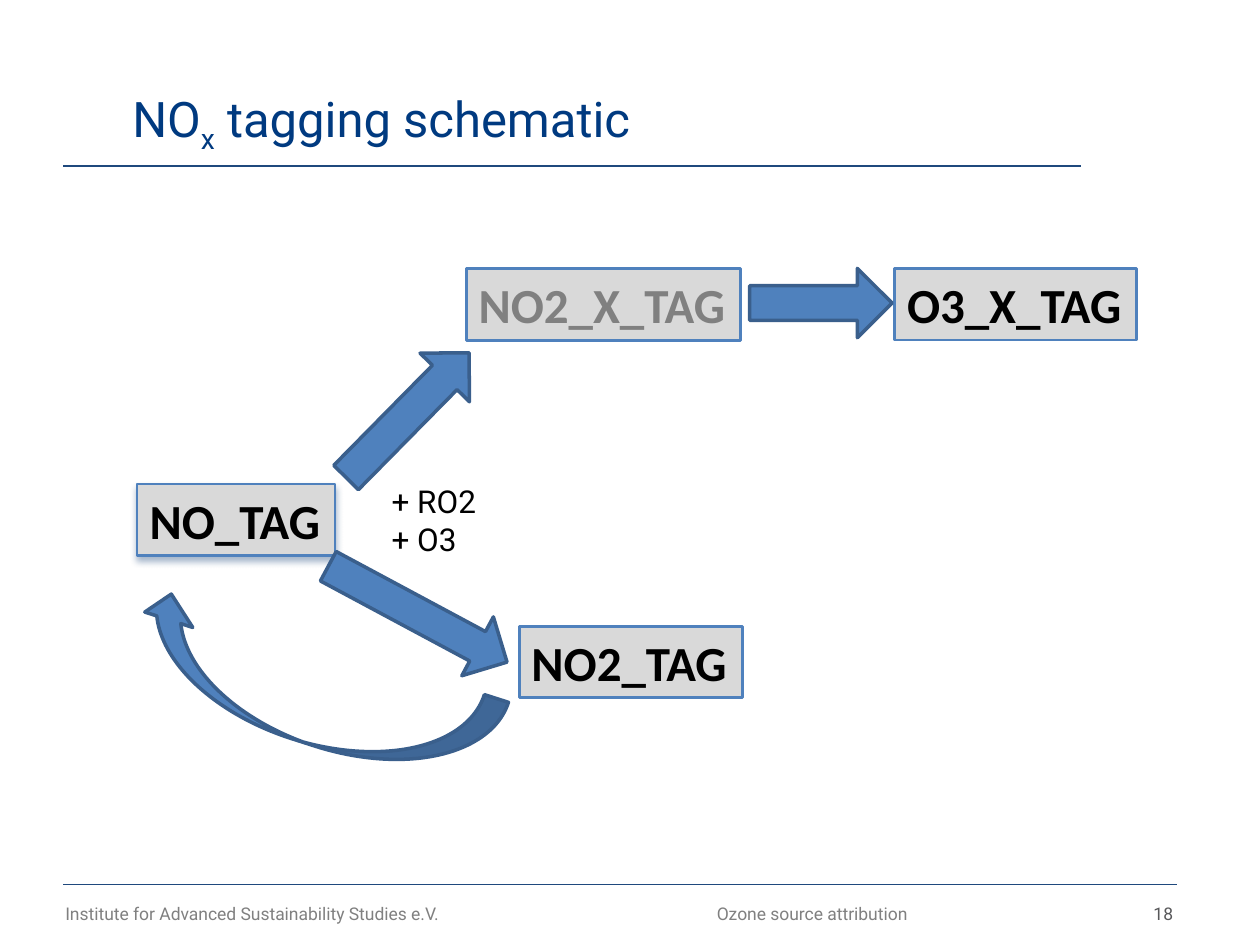
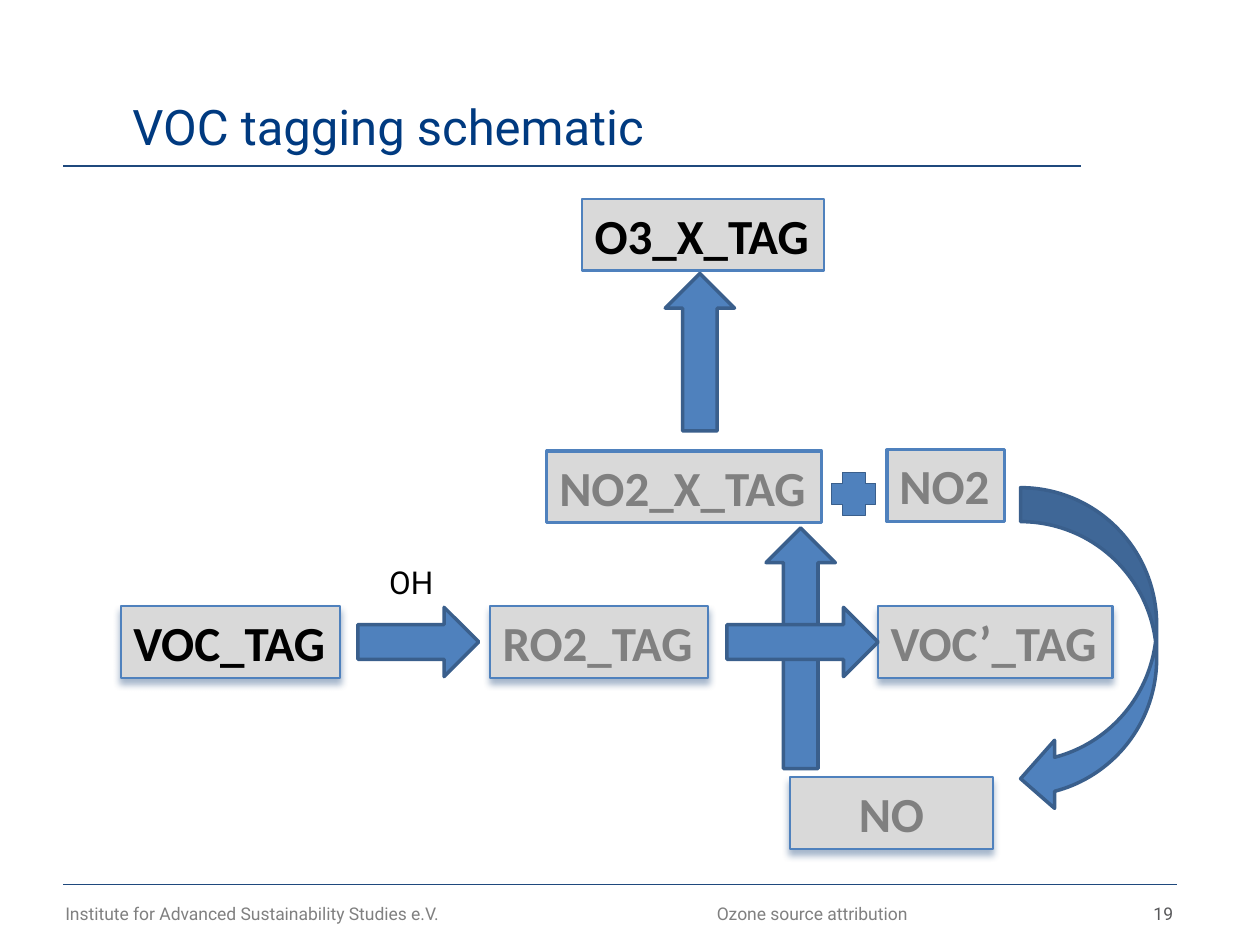
from lxml.etree import SubElement
from pptx import Presentation
from pptx.dml.color import RGBColor
from pptx.enum.shapes import MSO_CONNECTOR, MSO_SHAPE
from pptx.enum.text import MSO_ANCHOR, PP_ALIGN
from pptx.oxml.ns import qn
from pptx.util import Inches, Pt

HUES = {
    "title": "003A80", "rule": "1F497D", "foot": "808080", "page": "58585A",
    "box": "D9D9D9", "edge": "4F81BD", "arrow": "4F81BD", "rim": "3A5F8C",
    "ink": "000000", "faint": "808080", "shade": "1F497D",
}
BODY, LABEL = "Roboto", "Calibri"


def hue(name):
    return RGBColor.from_string(HUES[name])


def write(frame, *lines, size=18, font=BODY, color="ink", bold=False,
          align=PP_ALIGN.LEFT, anchor=MSO_ANCHOR.TOP, wrap=False, inset=True):
    """Fill a text frame; a line is a string or a list of (text, baseline)."""
    frame.word_wrap = wrap
    frame.vertical_anchor = anchor
    if not inset:
        frame.margin_left = frame.margin_right = 0
        frame.margin_top = frame.margin_bottom = 0
    for i, line in enumerate(lines):
        para = frame.add_paragraph() if i else frame.paragraphs[0]
        para.alignment = align
        for text, base in [(line, 0)] if isinstance(line, str) else line:
            run = para.add_run()
            run.text = text
            run.font.size, run.font.name = Pt(size), font
            run.font.bold = bold
            run.font.color.rgb = hue(color)
            if base:
                run.font._element.set("baseline", str(base * 1000))


class Deck:
    def __init__(self):
        self.prs = Presentation()
        self.prs.slide_width, self.prs.slide_height = Inches(10), Inches(7.5)
        self.slide = None

    def start(self, title, page):
        """Add a slide with its title, rules and footer."""
        self.slide = self.prs.slides.add_slide(self.prs.slide_layouts[5])
        self.rule(8.58, 1.32)
        self.rule(9.34, 7.02)
        foot = {"size": 10, "color": "foot", "wrap": True}
        self.text(0.42, 7.12, 3.73, 0.27,
                  "Institute for Advanced Sustainability Studies e.V.", **foot)
        self.text(4.16, 7.12, 4.57, 0.27, "Ozone source attribution",
                  align=PP_ALIGN.CENTER, **foot)
        self.text(9.02, 7.17, 0.29, 0.17, str(page), size=10, color="page",
                  align=PP_ALIGN.RIGHT, inset=False)
        head = self.slide.shapes.title
        head.left, head.top = Inches(1.05), Inches(0.75)
        head.width, head.height = Inches(4.72), Inches(0.48)
        write(head.text_frame, title, size=28, color="title", wrap=True,
              anchor=MSO_ANCHOR.BOTTOM, inset=False)

    def rule(self, end, y):
        line = self.slide.shapes.add_connector(
            MSO_CONNECTOR.STRAIGHT, Inches(0.5), Inches(y), Inches(end), Inches(y))
        line.line.color.rgb, line.line.width = hue("rule"), Pt(1)
        SubElement(line._element.spPr, qn("a:effectLst"))

    def text(self, x, y, w, h, *lines, **style):
        box = self.slide.shapes.add_textbox(
            Inches(x), Inches(y), Inches(w), Inches(h))
        write(box.text_frame, *lines, **style)

    def shape(self, kind, x, y, w, h, fill="arrow", edge="rim", width=2, turn=0):
        item = self.slide.shapes.add_shape(
            kind, Inches(x), Inches(y), Inches(w), Inches(h))
        item.shadow.inherit = False
        item.fill.solid()
        item.fill.fore_color.rgb = hue(fill)
        item.line.color.rgb, item.line.width = hue(edge), Pt(width)
        item.rotation = turn
        return item

    def node(self, x, y, w, text, color="ink", width=1.75, shade=False, **style):
        """Add a grey species box, with or without a soft shadow."""
        box = self.shape(MSO_SHAPE.RECTANGLE, x, y, w, 0.57, "box", "edge",
                         1.25 if shade else width)
        if shade:
            glow = SubElement(
                box._element.spPr.find(qn("a:effectLst")), qn("a:outerShdw"),
                blurRad=str(Pt(4)), dist=str(Pt(3)), dir="5400000", rotWithShape="0")
            tint = SubElement(glow, qn("a:srgbClr"), val=HUES["shade"])
            SubElement(tint, qn("a:alpha"), val="40000")
        write(box.text_frame, text, size=28, font=LABEL, color=color,
              bold=True, **style)

    def arrow(self, x, y, w, h=0.55, turn=0):
        self.shape(MSO_SHAPE.RIGHT_ARROW, x, y, w, h, turn=turn)

    def curve(self, x, y, w, h, turn=0):
        self.shape(MSO_SHAPE.CURVED_LEFT_ARROW, x, y, w, h, turn=turn)


def draw_nox(deck):
    deck.start([("NO", 0), ("x", -25), (" tagging schematic", 0)], 18)
    # Species and the paths between them
    deck.node(1.09, 3.84, 1.57, "NO_TAG", shade=True)
    deck.node(3.7, 2.13, 2.18, "NO2_X_TAG", "faint")
    deck.arrow(2.54, 3.02, 1.39, turn=314.6)
    deck.node(4.12, 4.97, 1.77, "NO2_TAG")
    deck.arrow(2.51, 4.61, 1.61, 0.53, turn=28.2)
    deck.text(3.01, 3.78, 0.94, 0.71, "+ RO2", "+ O3")
    deck.node(7.1, 2.13, 1.92, "O3_X_TAG", width=1.5)
    deck.arrow(5.95, 2.13, 1.13)
    # Return path
    deck.curve(2.08, 3.99, 0.8, 3.01, turn=107.8)


def draw_voc(deck):
    deck.start("VOC tagging schematic", 19)
    # NO to NO2
    deck.node(6.27, 6.17, 1.61, "NO", "faint", shade=True, wrap=True,
              align=PP_ALIGN.CENTER)
    deck.node(4.34, 3.58, 2.18, "NO2_X_TAG", "faint")
    deck.arrow(5.4, 4.87, 1.91, turn=270)
    deck.node(7.04, 3.57, 0.93, "NO2", "faint")
    deck.shape(MSO_SHAPE.CROSS, 6.6, 3.75, 0.35, 0.34, width=0.5)
    # VOC chain
    row = 4.81
    for x, w, text, color in [(0.96, 1.74, "VOC_TAG", "ink"),
                              (6.97, 1.86, "VOC’_TAG", "faint"),
                              (3.89, 1.73, "RO2_TAG", "faint")]:
        deck.node(x, row, w, text, color, shade=True)
    for x, w in [(2.84, 0.96), (5.77, 1.2)]:
        deck.arrow(x, row + 0.01, w)
    deck.text(2.99, 4.42, 0.55, 0.4, "OH")
    # Ozone and the return path
    deck.node(4.62, 1.58, 1.92, "O3_X_TAG", width=1.5)
    deck.arrow(4.93, 2.52, 1.25, turn=270)
    deck.curve(8.1, 3.87, 1.08, 2.58)


def main():
    deck = Deck()
    draw_nox(deck)
    draw_voc(deck)
    deck.prs.save("out.pptx")


if __name__ == "__main__":
    main()
